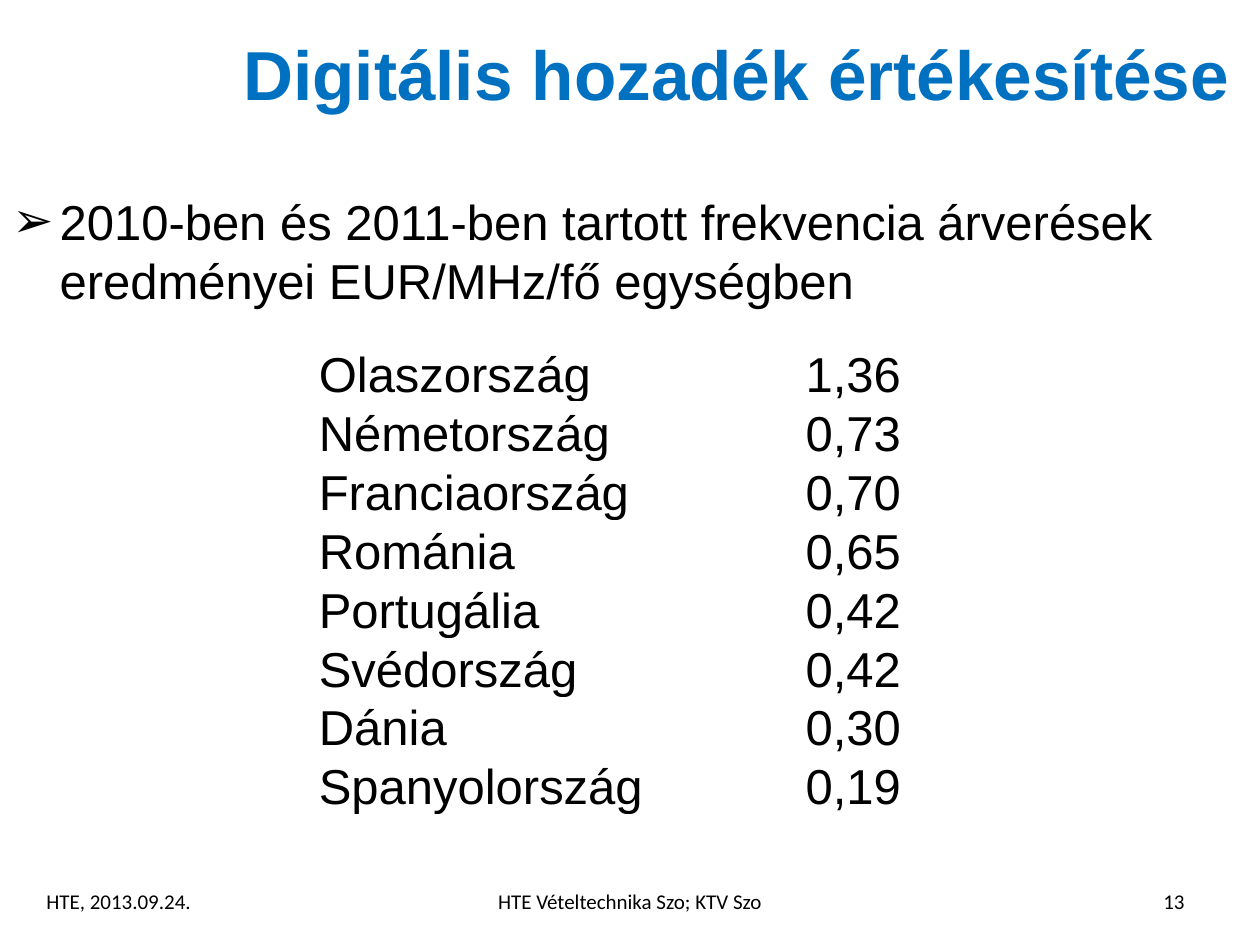
from lxml.etree import SubElement
from pptx import Presentation
from pptx.dml.color import RGBColor
from pptx.enum.text import MSO_ANCHOR, PP_ALIGN
from pptx.oxml.ns import qn
from pptx.util import Pt

BLACK, BLUE, WHITE = "000000", "0070C0", "FFFFFF"
RESULTS = [
    ("Olaszország", "1,36"),
    ("Németország", "0,73"),
    ("Franciaország", "0,70"),
    ("Románia", "0,65"),
    ("Portugália", "0,42"),
    ("Svédország", "0,42"),
    ("Dánia", "0,30"),
    ("Spanyolország", "0,19"),
]


def rgb(color):
    return RGBColor.from_string(color)


def add_run(p, text, size, font="Arial", color=BLACK, bold=False):
    r = p.add_run()
    r.text = text
    r.font.size = Pt(size)
    r.font.name = font
    r.font.bold = bold
    r.font.color.rgb = rgb(color)


def add_title(slide, text):
    sp = slide.shapes.title
    sp.left, sp.top, sp.width, sp.height = Pt(121.7), Pt(0), Pt(598.3), Pt(82.8)
    tf = sp.text_frame
    tf.vertical_anchor = MSO_ANCHOR.MIDDLE
    p = tf.paragraphs[0]
    p.alignment = PP_ALIGN.CENTER
    add_run(p, text, 39.6, color=BLUE, bold=True)


def add_text(slide, left, top, width, height, anchor=MSO_ANCHOR.TOP):
    """Add an empty wrapping text box and return its first paragraph."""
    sp = slide.shapes.add_textbox(Pt(left), Pt(top), Pt(width), Pt(height))
    tf = sp.text_frame
    tf.word_wrap = True
    tf.vertical_anchor = anchor
    return tf.paragraphs[0]


def add_bullet(p, char, indent):
    pPr = p._p.get_or_add_pPr()
    pPr.set("marL", str(Pt(indent)))
    pPr.set("indent", str(-Pt(indent)))
    SubElement(pPr, qn("a:buFont"), typeface="Arial")
    SubElement(pPr, qn("a:buChar"), char=char)


def add_footer(slide, left, width, text, align):
    p = add_text(slide, left, 500.4, width, 28.8, MSO_ANCHOR.MIDDLE)
    p.alignment = align
    add_run(p, text, 12, font="Calibri")


def set_borders(cell, bottom):
    tcPr = cell._tc.get_or_add_tcPr()
    for side, width in (("L", 1), ("R", 1), ("T", 1), ("B", bottom)):
        ln = SubElement(tcPr, qn(f"a:ln{side}"), w=str(Pt(width)))
        fill = SubElement(ln, qn("a:solidFill"))
        SubElement(fill, qn("a:srgbClr"), val=WHITE)


def add_results(slide, rows):
    row_height = 29.5
    table = slide.shapes.add_table(len(rows), 2, Pt(178.6), Pt(196.6),
                                   Pt(339.8), Pt(row_height * len(rows))).table
    table.first_row = table.horz_banding = False
    for column, width in zip(table.columns, (223.9, 115.9)):
        column.width = Pt(width)
    for i, row in enumerate(rows):
        table.rows[i].height = Pt(row_height)
        for j, (text, align) in enumerate(zip(row, (PP_ALIGN.LEFT, PP_ALIGN.RIGHT))):
            cell = table.cell(i, j)
            cell.margin_left = cell.margin_right = Pt(3.6)
            cell.margin_top = cell.margin_bottom = Pt(0)
            cell.vertical_anchor = MSO_ANCHOR.BOTTOM
            set_borders(cell, bottom=3 if i == 0 else 1)
            cell.fill.background()
            p = cell.text_frame.paragraphs[0]
            p.alignment = align
            add_run(p, text, 28)


def main():
    prs = Presentation()
    prs.slide_width, prs.slide_height = Pt(720), Pt(540)
    slide = prs.slides.add_slide(prs.slide_layouts[5])
    slide.background.fill.solid()
    slide.background.fill.fore_color.rgb = rgb(WHITE)

    add_title(slide, "Digitális hozadék értékesítése")
    p = add_text(slide, 0, 105.8, 720, 376.6)
    add_bullet(p, "➢", 27)
    add_run(p, "2010-ben és 2011-ben tartott frekvencia árverések "
               "eredményei EUR/MHz/fő egységben", 28)
    add_footer(slide, 19.4, 136.1, "HTE, 2013.09.24.", PP_ALIGN.LEFT)
    add_footer(slide, 218.2, 283.7, "HTE Vételtechnika Szo; KTV Szo", PP_ALIGN.CENTER)
    add_footer(slide, 547.2, 136.8, "13", PP_ALIGN.RIGHT)
    add_results(slide, RESULTS)
    prs.save("out.pptx")


if __name__ == "__main__":
    main()
